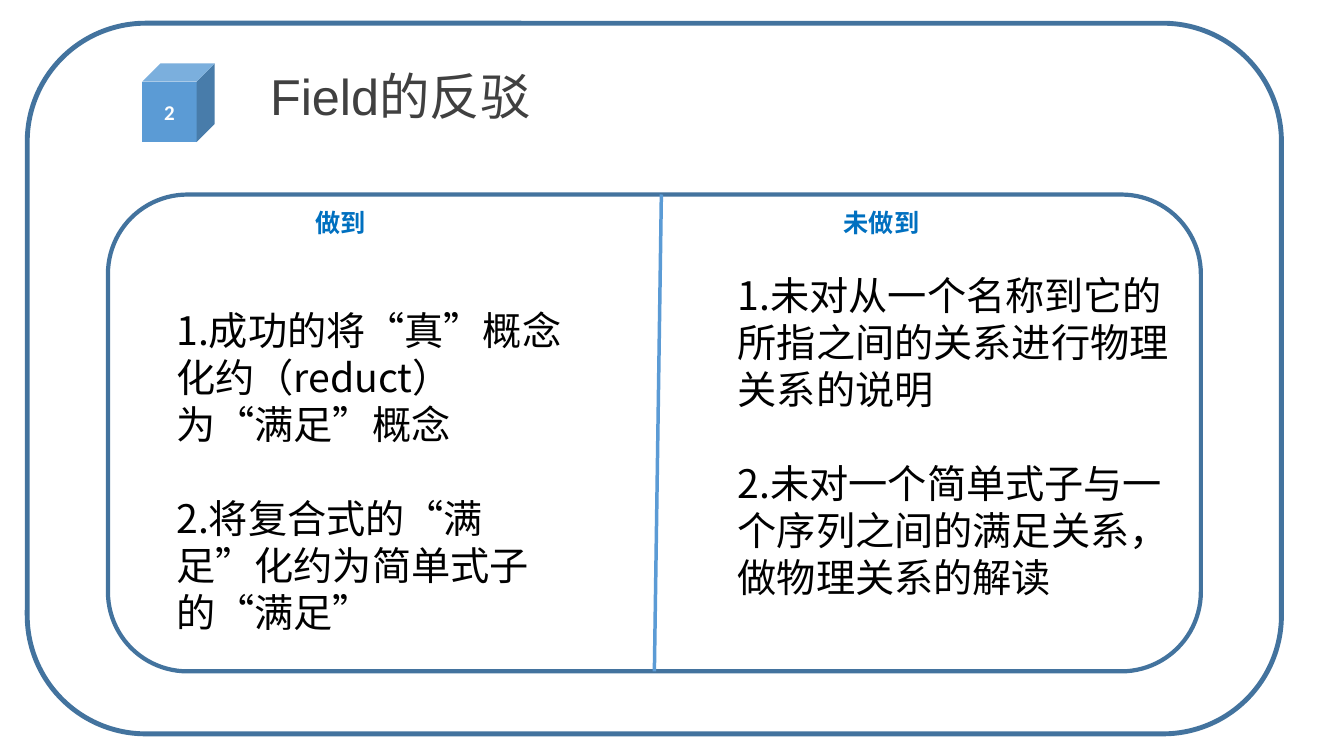
from lxml import etree
from pptx import Presentation
from pptx import util as u
from pptx.dml.color import RGBColor
from pptx.enum import shapes, text
from pptx.oxml.ns import qn

WIDTH, HEIGHT = 13.33, 7.5
CJK = "Noto Sans CJK SC"
BLUE, DARK_BLUE, HEADING_BLUE = "5B9BD5", "43739E", "0070C0"

# Each column: heading place, heading, body place, points
# (places are left, top, width, height in percent of the slide)
COLUMNS = [
    ((22.73, 26.8, 8.33, 5.33), "做到",
     (12.38, 39.87, 30.16, 45.33),
     ["1.成功的将“真”概念化约（reduct）为“满足”概念",
      "2.将复合式的“满足”化约为简单式子的“满足”"]),
    ((62.04, 26.8, 8.33, 5.33), "未做到",
     (54.16, 35.2, 35.48, 45.33),
     ["1.未对从一个名称到它的所指之间的关系进行物理关系的说明",
      "2.未对一个简单式子与一个序列之间的满足关系，做物理关系的解读"]),
]


def color(value):
    return RGBColor.from_string(value)


def across(share):
    return u.Inches(WIDTH * share / 100)


def down(share):
    return u.Inches(HEIGHT * share / 100)


def place(left, top, width, height):
    return across(left), down(top), across(width), down(height)


def style(para, size, fill, font=CJK, bold=False):
    for span in para.runs:
        span.font.size = u.Pt(size)
        span.font.name = font
        span.font.bold = bold
        span.font.color.rgb = color(fill)
        east_asian = etree.Element(qn("a:ea"), typeface=CJK)
        span.font._element.find(qn("a:latin")).addnext(east_asian)


def add_outline(page, kind, area, weight):
    outline = page.shapes.add_shape(kind, *place(*area))
    outline.shadow.inherit = False
    outline.fill.background()
    outline.line.color.rgb = color(DARK_BLUE)
    outline.line.width = u.Pt(weight)
    return outline


def add_cube(page, area, number):
    cube = page.shapes.add_shape(shapes.MSO_SHAPE.CUBE, *place(*area))
    cube.shadow.inherit = False
    cube.fill.solid()
    cube.fill.fore_color.rgb = color(BLUE)
    cube.line.fill.background()
    frame = cube.text_frame
    frame.text = number
    frame.vertical_anchor = text.MSO_ANCHOR.MIDDLE
    frame.paragraphs[0].alignment = text.PP_ALIGN.CENTER
    style(frame.paragraphs[0], 15, "FFFFFF", "Calibri", bold=True)


def add_text(page, area, lines):
    box = page.shapes.add_textbox(*place(*area))
    frame = box.text_frame
    frame.word_wrap = True
    frame.text = "\n".join(lines)
    return frame


def add_title(page, area, title):
    frame = add_text(page, area, [title])
    frame.vertical_anchor = text.MSO_ANCHOR.MIDDLE
    frame.paragraphs[0].line_spacing = 0.9
    style(frame.paragraphs[0], 36, "404040", "Arial")


def add_passage(page, area, lines, size, fill, bold=False):
    leading = u.Pt(size * 1.2)
    frame = add_text(page, area, lines)
    for para in frame.paragraphs:
        para.line_spacing = leading
        style(para, size, fill, bold=bold)
    # One line of space between the points
    for para in frame.paragraphs[:-1]:
        para.space_after = leading


def add_divider(page, panel, top_share):
    middle = panel.left + panel.width // 2
    divider = page.shapes.add_connector(
        shapes.MSO_CONNECTOR.STRAIGHT, across(top_share), panel.top,
        middle, panel.top + panel.height)
    divider.end_connect(panel, 2)
    divider.line.color.rgb = color(BLUE)
    divider.line.width = u.Pt(2.5)
    etree.SubElement(divider._element.spPr, qn("a:effectLst"))


def main():
    deck = Presentation()
    deck.slide_width, deck.slide_height = u.Inches(WIDTH), u.Inches(HEIGHT)
    page = deck.slides.add_slide(deck.slide_layouts[6])

    # Frame and title
    add_outline(page, shapes.MSO_SHAPE.ROUNDED_RECTANGLE,
                (2.03, 3.07, 93.32, 94), 3.5)
    add_title(page, (19.35, 8.27, 65.27, 9.73), "Field的反驳")
    add_cube(page, (10.58, 8.4, 5.4, 10.4), "2")

    # Panel split by a slanted divider
    panel = add_outline(page, shapes.MSO_SHAPE.FLOWCHART_ALTERNATE_PROCESS,
                        (8.03, 25.73, 81.32, 63.07), 3)
    add_divider(page, panel, 49.21)

    # Two columns of points
    for heading_area, heading, body_area, points in COLUMNS:
        add_passage(page, heading_area, [heading], 18, HEADING_BLUE, bold=True)
        add_passage(page, body_area, points, 28, "000000")

    deck.save("out.pptx")


if __name__ == "__main__":
    main()
